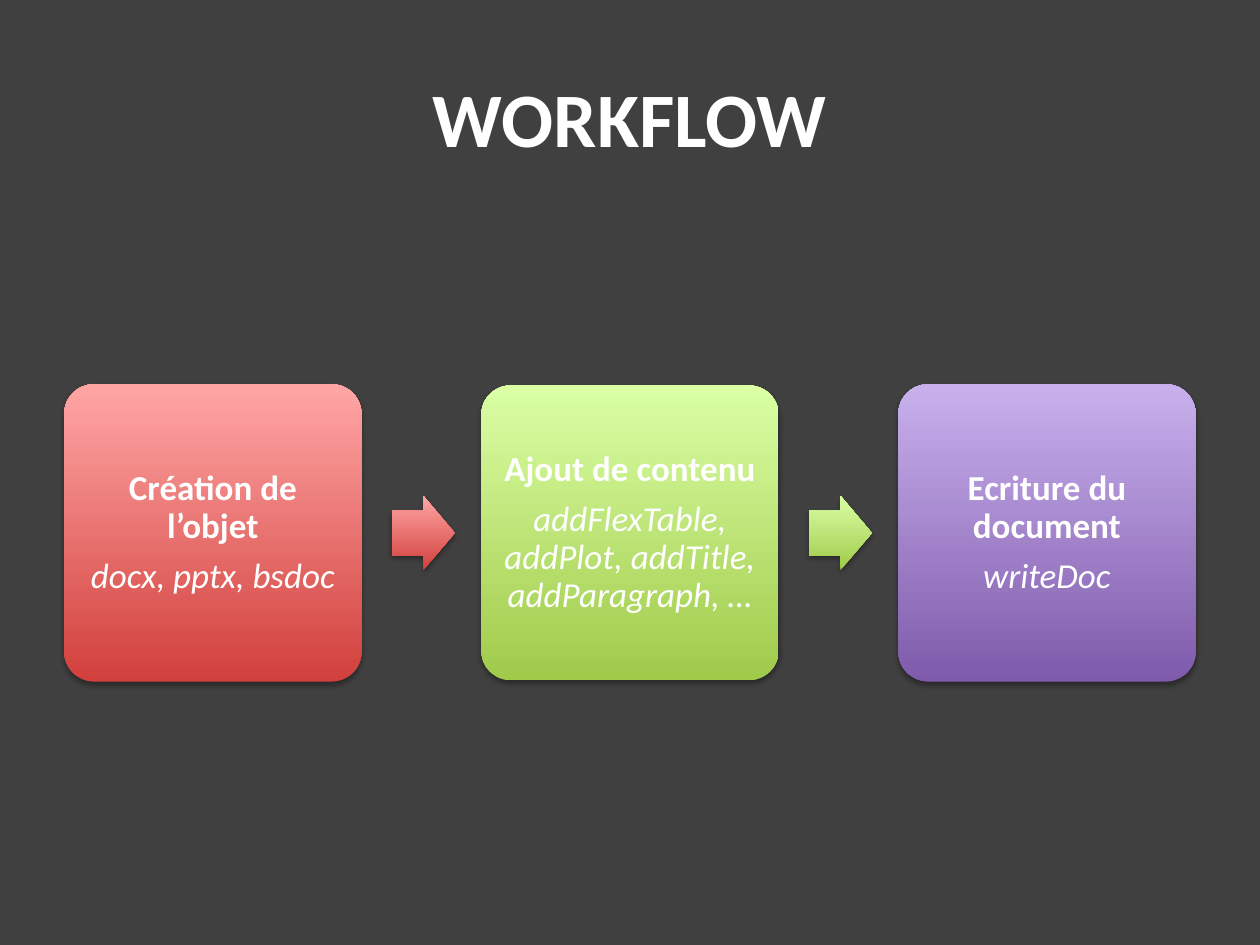
import pptx
import pptx.util
import pptx.dml.color
import pptx.enum.shapes
import pptx.enum.text
import pptx.oxml
import pptx.oxml.ns

Inches, Pt = pptx.util.Inches, pptx.util.Pt
RGB = pptx.dml.color.RGBColor
SHAPE = pptx.enum.shapes.MSO_SHAPE

WHITE = RGB(0xFF, 0xFF, 0xFF)
GREY = RGB(0x40, 0x40, 0x40)
RED = RGB(0xD1, 0x40, 0x3C), RGB(0xFF, 0xA6, 0xA5)
GREEN = RGB(0xA0, 0xCA, 0x4A), RGB(0xDA, 0xFF, 0xA5)
PURPLE = RGB(0x7F, 0x5B, 0xAB), RGB(0xC8, 0xB0, 0xED)

TITLE = "WORKFLOW"
# heading, functions, (bottom, top) colours, height of the card
STEPS = [
    ("Création de l’objet", "docx, pptx, bsdoc", RED, 2.36),
    ("Ajout de contenu", "addFlexTable, addPlot, addTitle, addParagraph, …", GREEN, 2.34),
    ("Ecriture du document", "writeDoc", PURPLE, 2.36),
]

LEFT, MID, PITCH, WIDE = 0.51, 4.23, 3.31, 2.36
ARROW_GAP, ARROW_W, ARROW_H = 0.24, 0.5, 0.59

SHADOW = (
    f'<a:effectLst {pptx.oxml.ns.nsdecls("a")}>'
    f'<a:outerShdw blurRad="{Pt(3.1)}" dist="{Pt(1.8)}" dir="5400000" rotWithShape="0">'
    '<a:srgbClr val="000000"><a:alpha val="35000"/></a:srgbClr>'
    '</a:outerShdw></a:effectLst>'
)


def write(frame, lines, size=20, inset=0.08, line=None, after=0):
    """Fill a frame with centred lines, each a (text, bold, italic) tuple."""
    frame.word_wrap = True
    frame.vertical_anchor = pptx.enum.text.MSO_ANCHOR.MIDDLE
    frame.margin_left = frame.margin_right = Inches(inset)
    frame.margin_top = frame.margin_bottom = Inches(inset)
    for i, (text, bold, slant) in enumerate(lines):
        para = frame.add_paragraph() if i else frame.paragraphs[0]
        para.alignment = pptx.enum.text.PP_ALIGN.CENTER
        para.line_spacing = line
        para.space_after = Pt(after)
        run = para.add_run()
        run.text = text
        font = run.font
        font.name, font.size = "Calibri", Pt(size)
        font.bold, font.italic = bold, slant
        font.color.rgb = WHITE


def block(slide, kind, x, wide, high, tones, adjust):
    """Add a shaded, shadowed shape centred on the row's middle line."""
    shape = slide.shapes.add_shape(
        kind, Inches(x), Inches(MID - high / 2), Inches(wide), Inches(high))
    for i, value in enumerate(adjust):
        shape.adjustments[i] = value
    shape.fill.gradient()
    shape.fill.gradient_angle = 90
    for stop, tone, place in zip(shape.fill.gradient_stops, tones, (0, 1)):
        stop.color.rgb = tone
        stop.position = place
    shape.line.fill.background()
    shape._element.spPr.append(pptx.oxml.parse_xml(SHADOW))
    return shape


def main():
    deck = pptx.Presentation()
    deck.slide_width, deck.slide_height = Inches(10), Inches(7.5)
    slide = deck.slides.add_slide(deck.slide_layouts[6])
    slide.background.fill.solid()
    slide.background.fill.fore_color.rgb = GREY

    title = slide.shapes.add_textbox(Inches(0.5), Inches(0.3), Inches(9), Inches(1.25))
    write(title.text_frame, [(TITLE, True, False)], size=44)

    for i, (head, names, tones, high) in enumerate(STEPS):
        x = LEFT + i * PITCH
        card = block(slide, SHAPE.ROUNDED_RECTANGLE, x, WIDE, high, tones, [0.1])
        write(card.text_frame, [(head, True, False), (names, False, True)],
              line=0.9, after=7)
        if i < len(STEPS) - 1:
            block(slide, SHAPE.RIGHT_ARROW, x + WIDE + ARROW_GAP,
                  ARROW_W, ARROW_H, tones, [0.6, 0.5])

    deck.save("out.pptx")


if __name__ == "__main__":
    main()
